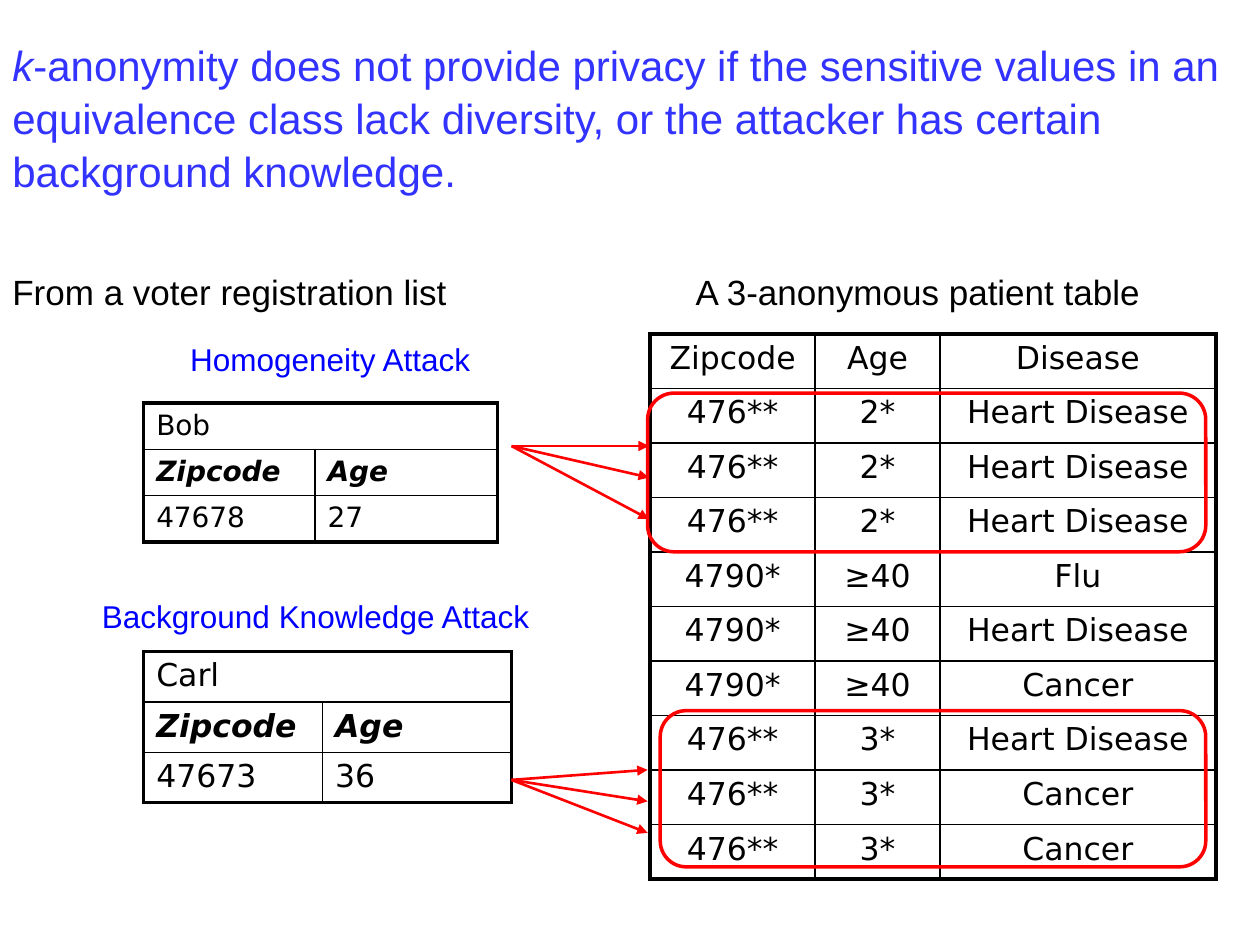
from dataclasses import dataclass

from lxml.etree import SubElement
from pptx import Presentation
from pptx.dml.color import RGBColor
from pptx.enum.shapes import MSO_CONNECTOR as Connector, MSO_SHAPE as Shape
from pptx.enum.text import MSO_ANCHOR as Anchor, PP_ALIGN as Align
from pptx.oxml.ns import qn
from pptx.util import Inches, Pt

COLORS = {"title": "3333FF", "attack": "0000FF", "ink": "000000", "mark": "FF0000"}
OUTER, INNER = 2.25, 1


@dataclass
class Grid:
    left: float
    top: float
    row_height: float
    columns: list[float]
    rows: list[tuple[str, ...]]
    size: int
    align: Align = Align.LEFT
    named_person: bool = False


@dataclass
class Label:
    text: str
    box: tuple[float, float, float, float]
    size: int
    color: str = "ink"
    align: Align = Align.CENTER


@dataclass
class ArrowFan:
    start: tuple[float, float]
    tip_x: float
    tip_ys: tuple[float, ...]


PATIENTS = Grid(
    5.16, 2.65, 0.433, [1.31, 0.99, 2.19],
    [("Zipcode", "Age", "Disease")]
    + [("476**", "2*", "Heart Disease")] * 3
    + [("4790*", "≥40", disease) for disease in ("Flu", "Heart Disease", "Cancer")]
    + [("476**", "3*", disease) for disease in ("Heart Disease", "Cancer", "Cancer")],
    18, Align.CENTER,
)
BOB = Grid(1.14, 3.2, 0.36, [1.36, 1.45],
           [("Bob", ""), ("Zipcode", "Age"), ("47678", "27")], 16, named_person=True)
CARL = Grid(1.14, 5.17, 0.39, [1.42, 1.5],
            [("Carl", ""), ("Zipcode", "Age"), ("47673", "36")], 18, named_person=True)

LABELS = [
    Label("A 3-anonymous patient table", (5.08, 2.1, 4.41, 0.47), 20),
    Label("Homogeneity Attack", (0.83, 2.65, 3.58, 0.33), 18, "attack"),
    Label("Background Knowledge Attack", (0.16, 4.69, 4.69, 0.43), 18, "attack"),
    Label("From a voter registration list", (0, 2.1, 4.16, 0.43), 20, align=Align.LEFT),
]
ATTACKS = [
    ArrowFan((4.06, 3.54), 5.15, (3.54, 3.79, 4.12)),
    ArrowFan((4.06, 6.19), 5.14, (6.11, 6.36, 6.61)),
]
MATCHED_GROUPS = [(5.14, 3.12, 4.43, 1.26), (5.24, 5.64, 4.33, 1.24)]


def add_text(paragraph, text: str, *, size: int, color: str = "ink", font: str = "Arial",
             bold: bool = False, italic: bool = False, align: Align = Align.LEFT) -> None:
    paragraph.alignment = align
    run = paragraph.add_run()
    run.text = text
    run.font.name = font
    run.font.size = Pt(size)
    run.font.bold = bold
    run.font.italic = italic
    run.font.color.rgb = RGBColor.from_string(COLORS[color])


def add_frame(slide, box: tuple[float, float, float, float]):
    frame = slide.shapes.add_textbox(*map(Inches, box)).text_frame
    frame.word_wrap = True
    return frame


def draw_label(slide, label: Label) -> None:
    add_text(add_frame(slide, label.box).paragraphs[0], label.text,
             size=label.size, color=label.color, align=label.align)


def set_borders(cell, widths: dict[str, float]) -> None:
    properties = cell._tc.get_or_add_tcPr()
    for side, width in widths.items():
        border = SubElement(properties, qn(f"a:ln{side}"), w=str(Pt(width)))
        SubElement(SubElement(border, qn("a:solidFill")), qn("a:srgbClr"), val=COLORS["ink"])


def draw_grid(slide, grid: Grid) -> None:
    row_count, column_count = len(grid.rows), len(grid.columns)
    table = slide.shapes.add_table(
        row_count, column_count, Inches(grid.left), Inches(grid.top),
        Inches(sum(grid.columns)), Inches(grid.row_height * row_count)).table
    table.first_row = table.horz_banding = False
    for column, width in zip(table.columns, grid.columns):
        column.width = Inches(width)
    for r, values in enumerate(grid.rows):
        table.rows[r].height = Inches(grid.row_height)
        spans = grid.named_person and r == 0
        heading = grid.named_person and r == 1
        if spans:
            table.cell(0, 0).merge(table.cell(0, column_count - 1))
        for c, value in enumerate(values):
            cell = table.cell(r, c)
            set_borders(cell, {
                "L": OUTER if spans or c == 0 else INNER,
                "R": OUTER if spans or c == column_count - 1 else INNER,
                "T": OUTER if r == 0 else INNER,
                "B": OUTER if r == row_count - 1 else INNER,
            })
            cell.fill.background()
            if value:
                add_text(cell.text_frame.paragraphs[0], value, size=grid.size,
                         font="DejaVu Sans", bold=heading, italic=heading, align=grid.align)


def draw_arrows(slide, fan: ArrowFan) -> None:
    for tip_y in fan.tip_ys:
        arrow = slide.shapes.add_connector(
            Connector.STRAIGHT, *map(Inches, (*fan.start, fan.tip_x, tip_y)))
        arrow.line.color.rgb = RGBColor.from_string(COLORS["mark"])
        arrow.line.width = Pt(1.5)
        SubElement(arrow.line._get_or_add_ln(), qn("a:tailEnd"), type="triangle")
        SubElement(arrow._element.spPr, qn("a:effectLst"))


def draw_group_outline(slide, box: tuple[float, float, float, float]) -> None:
    outline = slide.shapes.add_shape(Shape.ROUNDED_RECTANGLE, *map(Inches, box))
    outline.shadow.inherit = False
    outline.fill.background()
    outline.line.color.rgb = RGBColor.from_string(COLORS["mark"])
    outline.line.width = Pt(2)


def draw_title(slide) -> None:
    frame = add_frame(slide, (0, 0.3, 10, 1.25))
    frame.vertical_anchor = Anchor.MIDDLE
    claim = frame.paragraphs[0]
    claim.line_spacing = 1.05
    add_text(claim, "k", size=24, color="title", italic=True)
    add_text(claim, "-anonymity does not provide privacy if the sensitive values in an "
             "equivalence class lack diversity, or the attacker has certain "
             "background knowledge.", size=24, color="title")


def main() -> None:
    deck = Presentation()
    deck.slide_width, deck.slide_height = Inches(10), Inches(7.5)
    slide = deck.slides.add_slide(deck.slide_layouts[6])
    draw_title(slide)
    for grid in (PATIENTS, BOB, CARL):
        draw_grid(slide, grid)
    for fan in ATTACKS:
        draw_arrows(slide, fan)
    for box in MATCHED_GROUPS:
        draw_group_outline(slide, box)
    for label in LABELS:
        draw_label(slide, label)
    deck.save("out.pptx")


if __name__ == "__main__":
    main()
